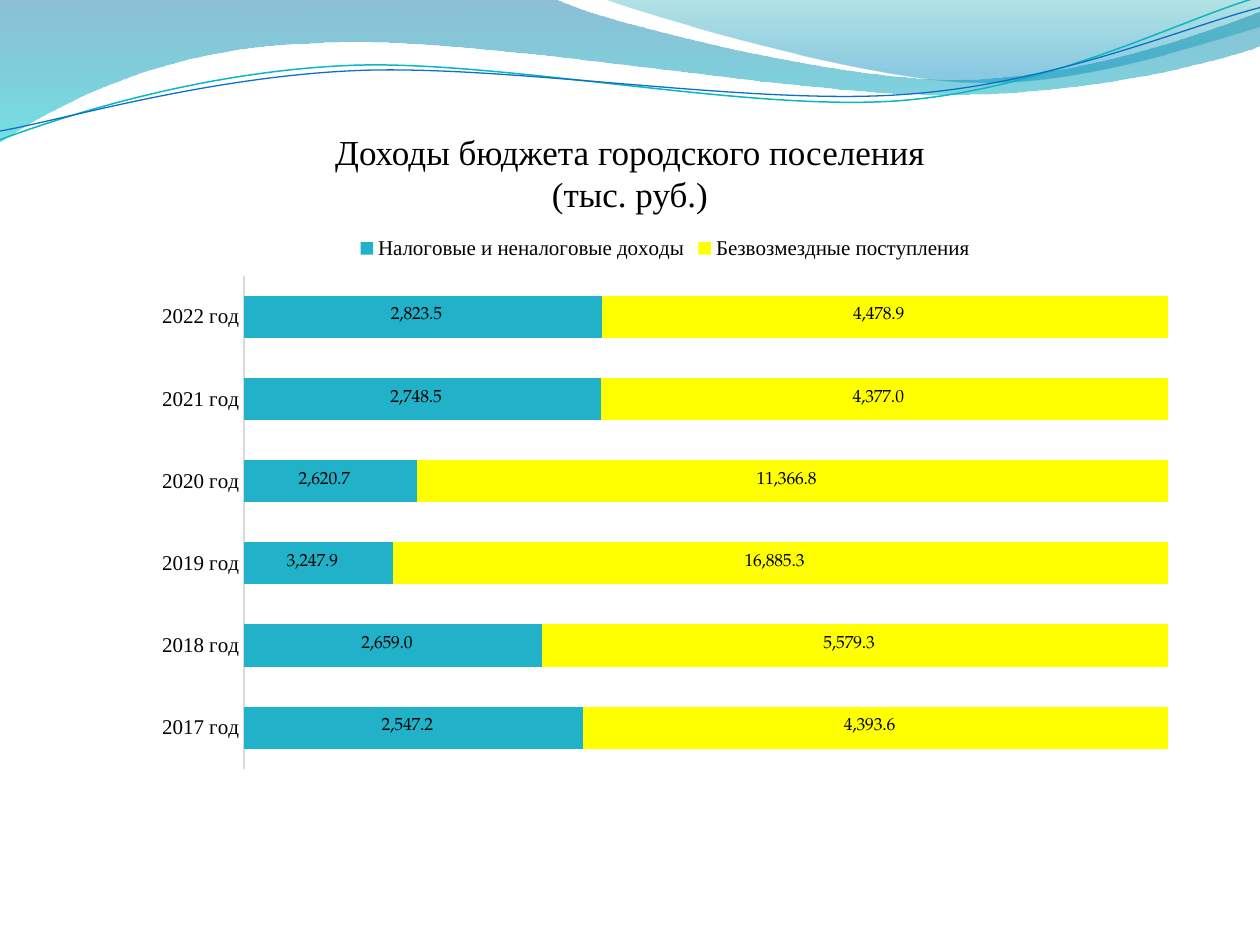
from math import cos, radians, sin

from lxml.etree import SubElement
from pptx import Presentation
from pptx.chart.data import CategoryChartData
from pptx.dml.color import RGBColor
from pptx.enum.chart import XL_CHART_TYPE, XL_LEGEND_POSITION, XL_TICK_MARK
from pptx.enum.text import MSO_ANCHOR, MSO_AUTO_SIZE, PP_ALIGN
from pptx.oxml.ns import qn
from pptx.util import Inches, Pt

# Content
TITLE = "Доходы бюджета городского поселения\v(тыс. руб.)"
YEARS = [f"{year} год" for year in range(2017, 2023)]
INCOME = [
    ("Налоговые и неналоговые доходы", "tax", [2547.2, 2659, 3247.9, 2620.7, 2748.5, 2823.5]),
    ("Безвозмездные поступления", "grants", [4393.6, 5579.3, 16885.3, 11366.8, 4377, 4478.9]),
]
NUMBER_FORMAT = r"#,##0.0\ _₽;\-#,##0.0\ _₽"

# Look
WIDTH, HEIGHT = 10, 7.5
COLORS = {
    "white": "FFFFFF", "text": "000000", "axis": "D9D9D9",
    "tax": "21B2C9", "grants": "FFFF00",
    "deep blue": "0074A1", "cyan": "00C6CF", "teal": "00A1A9", "sky": "008BBF",
    "upper line": "0AB8BF", "lower line": "0F6FC6",
}
SERIF = "Times New Roman"
TITLE_FONT = {"name": SERIF, "size": Pt(20), "bold": False}
AXIS_FONT = {"name": SERIF, "size": Pt(12), "bold": False}
LABEL_FONT = {"name": "TeX Gyre Pagella", "size": Pt(10), "bold": False}

# Waves in inches: box, then steps; a pair is straight, six numbers are a Bezier curve
BANDS = [
    ((-0.01, -0.01, 10.02, 1.14),
     [(0, 0), (4.4, -0.01), (4.76, 0.17, 6.64, 0.63, 7.58, 0.63),
      (8.53, 0.63, 9.58, 0.26, 10, 0.09), (10.01, 0.36),
      (9.83, 0.44, 8.7, 0.76, 7.46, 0.75), (6.22, 0.75, 3.82, 0.28, 2.57, 0.34),
      (1.29, 0.36, 0.46, 0.83, -0.01, 1.13), (0, 0)],
     [(0, "deep blue", 45), (1, "cyan", 55)]),
    ((4.79, -0.01, 5.21, 0.7),
     [(4.79, -0.01), (5.09, 0.11, 6.82, 0.62, 7.69, 0.65),
      (8.56, 0.69, 9.61, 0.32, 10, 0.21), (10, 0), (4.79, -0.01)],
     [(0, "teal", 30), (0.8, "sky", 45)]),
]
LINES = [
    ((-0.02, 0.22, 10.02, 0.71),
     [(0, 1.11), (0.48, 0.93, 1.58, 0.57, 2.77, 0.52),
      (3.95, 0.47, 5.93, 0.89, 7.13, 0.8), (8.33, 0.71, 9.38, 0.15, 9.98, -0.02)],
     "upper line", 0.85),
    ((-0.02, 0.3, 10.03, 0.58),
     [(0, 1.04), (0.47, 0.96, 1.64, 0.61, 2.83, 0.56),
      (4.03, 0.51, 5.97, 0.84, 7.17, 0.75), (8.36, 0.67, 9.41, 0.21, 10, 0.06)],
     "lower line", 0.75),
]
LINE_TILT = -2.7


def color(name):
    return RGBColor.from_string(COLORS[name])


def set_font(font, values):
    for key, value in values.items():
        setattr(font, key, value)
    font.color.rgb = color("text")


def to_local(x, y, box, tilt):
    """Place a slide point inside a box that is tilted about its centre."""
    left, top, width, height = box
    across, down = x - left - width / 2, y - top - height / 2
    turn = radians(-tilt)
    return (Inches(across * cos(turn) - down * sin(turn) + width / 2),
            Inches(across * sin(turn) + down * cos(turn) + height / 2))


def add_wave(page, box, steps, tilt=0, close=False):
    anchors = [(Inches(step[-2]), Inches(step[-1])) for step in steps]
    builder = page.shapes.build_freeform(*anchors[0], scale=1.0)
    builder.add_line_segments(anchors[1:], close=close)
    wave = builder.convert_to_shape()
    wave.left, wave.top, wave.width, wave.height = map(Inches, box)
    wave.rotation = tilt
    wave.shadow.inherit = False

    # Redraw the outline with true curves
    outline = next(wave._element.iter(qn("a:path")))
    for part in list(outline):
        outline.remove(part)
    outline.set("w", str(wave.width))
    outline.set("h", str(wave.height))
    for index, step in enumerate(steps):
        kind = "a:moveTo" if index == 0 else "a:lnTo" if len(step) == 2 else "a:cubicBezTo"
        part = SubElement(outline, qn(kind))
        for x, y in zip(step[::2], step[1::2]):
            across, down = to_local(x, y, box, tilt)
            SubElement(part, qn("a:pt"), x=str(int(across)), y=str(int(down)))
    if close:
        SubElement(outline, qn("a:close"))
    return wave


def add_band(page, box, steps, stops):
    band = add_wave(page, box, steps, close=True)
    band.line.fill.background()
    band.fill.gradient()
    band.fill.gradient_angle = 270  # top to bottom
    for stop, (position, name, _) in zip(band.fill.gradient_stops, stops):
        stop.position = position
        stop.color.rgb = color(name)
    tints = band._element.iter(qn("a:srgbClr"))
    for tint, (_, _, opacity) in zip(tints, stops):
        SubElement(tint, qn("a:alpha"), val=str(opacity * 1000))


def add_line(page, box, steps, name, weight):
    line = add_wave(page, box, steps, tilt=LINE_TILT)
    line.fill.background()
    line.line.color.rgb = color(name)
    line.line.width = Pt(weight)
    return line


def fill_title(box):
    box.left, box.top, box.width, box.height = map(Inches, (0.5, 1.17, 9, 0.53))
    box.fill.solid()
    box.fill.fore_color.rgb = color("white")
    box.line.color.rgb = color("white")
    box.line.width = Pt(0.75)
    frame = box.text_frame
    frame.text = TITLE
    layout = {"margin_left": 0, "margin_right": 0, "margin_top": Inches(0.05),
              "margin_bottom": 0, "vertical_anchor": MSO_ANCHOR.BOTTOM,
              "auto_size": MSO_AUTO_SIZE.NONE, "word_wrap": True}
    for key, value in layout.items():
        setattr(frame, key, value)
    para = frame.paragraphs[0]
    para.alignment = PP_ALIGN.CENTER
    for span in para.runs:
        set_font(span.font, TITLE_FONT)


def add_income_chart(page):
    data = CategoryChartData(number_format=NUMBER_FORMAT)
    data.categories = YEARS
    for name, _, values in INCOME:
        data.add_series(name, values)
    chart = page.shapes.add_chart(
        XL_CHART_TYPE.BAR_STACKED_100, *map(Inches, (1.12, 1.77, 8.32, 4.42)), data).chart
    set_font(chart.font, LABEL_FONT)
    chart.has_title = False

    # Legend
    chart.has_legend = True
    chart.legend.position = XL_LEGEND_POSITION.TOP
    chart.legend.include_in_layout = False
    set_font(chart.legend.font, AXIS_FONT)

    # Axes
    years = chart.category_axis
    years.major_tick_mark = years.minor_tick_mark = XL_TICK_MARK.NONE
    years.format.line.color.rgb = color("axis")
    years.format.line.width = Pt(0.75)
    set_font(years.tick_labels.font, AXIS_FONT)
    chart.value_axis.visible = False
    chart.value_axis.has_major_gridlines = False

    # Bars and their values
    plot = chart.plots[0]
    plot.gap_width, plot.overlap, plot.vary_by_categories = 95, 100, False
    for series, (_, name, _) in zip(plot.series, INCOME):
        series.format.fill.solid()
        series.format.fill.fore_color.rgb = color(name)
        labels = series.data_labels
        labels.show_value = True
        labels.number_format = NUMBER_FORMAT
        labels.number_format_is_linked = False
        set_font(labels.font, LABEL_FONT)


def main():
    deck = Presentation()
    deck.slide_width, deck.slide_height = Inches(WIDTH), Inches(HEIGHT)
    page = deck.slides.add_slide(deck.slide_layouts[5])  # title only
    for band in BANDS:
        add_band(page, *band)
    page.shapes.add_group_shape([add_line(page, *line) for line in LINES])
    fill_title(page.shapes.title)
    add_income_chart(page)
    deck.save("out.pptx")


if __name__ == "__main__":
    main()
